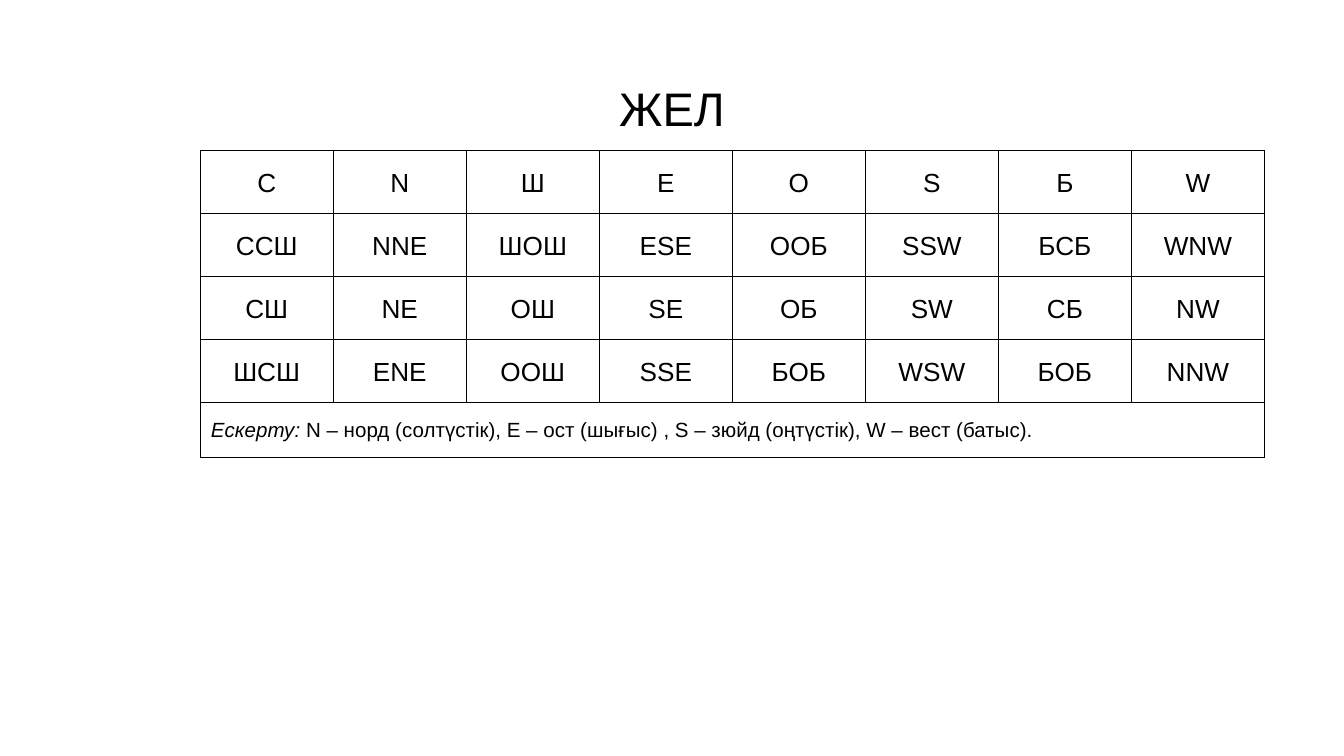
from lxml import etree
from pptx import Presentation
from pptx.dml.color import RGBColor
from pptx.enum.text import MSO_ANCHOR, PP_ALIGN
from pptx.oxml.ns import qn
from pptx.util import Inches, Pt

CENTER, JUSTIFY = PP_ALIGN.CENTER, PP_ALIGN.JUSTIFY
MIDDLE, TOP = MSO_ANCHOR.MIDDLE, MSO_ANCHOR.TOP
COLORS = {"page": "FFFFFF", "ink": "000000"}
FONT = "Arial"
SLIDE_WIDTH = Inches(10)
SLIDE_HEIGHT = SLIDE_WIDTH * 9 // 16
COLUMN_WIDTH, ROW_HEIGHT = Inches(0.99), Inches(0.2)
FRAME_SIDE = Inches(3.28)
CELL_FORMAT = {
    "margin_left": Inches(0.07), "margin_right": Inches(0.07),
    "margin_top": Inches(0.1), "margin_bottom": Inches(0.1),
    "vertical_anchor": TOP,
}
TITLE_FORMAT = {
    "margin_left": Inches(0.1), "margin_right": Inches(0.1),
    "margin_top": Inches(0.1), "margin_bottom": Inches(0.1),
    "vertical_anchor": MIDDLE, "word_wrap": True,
}
CELL_PARA_FORMAT = {"line_spacing": 1.15, "space_after": Pt(12)}

WINDS = [
    ["С", "N", "Ш", "E", "О", "S", "Б", "W"],
    ["ССШ", "NNE", "ШОШ", "ESE", "ООБ", "SSW", "БСБ", "WNW"],
    ["СШ", "NE", "ОШ", "SE", "ОБ", "SW", "СБ", "NW"],
    ["ШСШ", "ENE", "ООШ", "SSE", "БОБ", "WSW", "БОБ", "NNW"],
]
NOTE = [
    ("Ескерту:", True),
    (" N – норд (солтүстік), E – ост (шығыс) , S – зюйд (оңтүстік), W – вест (батыс).", False),
]


def apply_format(target, values):
    for name, value in values.items():
        setattr(target, name, value)


def add_span(para, text, size, italic=False):
    span = para.add_run()
    span.text = text
    apply_format(span.font, {"name": FONT, "size": Pt(size), "italic": italic})
    span.font.color.rgb = RGBColor.from_string(COLORS["ink"])


def add_title(page, text):
    box = page.shapes.add_textbox(
        int(SLIDE_WIDTH * 0.034), Inches(0.49), int(SLIDE_WIDTH * 0.932), Inches(0.63))
    apply_format(box.text_frame, TITLE_FORMAT)
    para = box.text_frame.paragraphs[0]
    para.alignment = CENTER
    add_span(para, text, 25.2)


def set_borders(cell):
    properties = cell._tc.get_or_add_tcPr()
    for position, side in enumerate(("lnL", "lnR", "lnT", "lnB")):
        line = etree.Element(qn(f"a:{side}"), w=str(Pt(0.6)))
        fill = etree.SubElement(line, qn("a:solidFill"))
        etree.SubElement(fill, qn("a:srgbClr"), val=COLORS["ink"])
        properties.insert(position, line)


def fill_cell(cell, spans, size, alignment, indent=0):
    """Write (text, italic) spans into a cell, with a first-line indent."""
    apply_format(cell, CELL_FORMAT)
    para = cell.text_frame.paragraphs[0]
    para._p.get_or_add_pPr().set("indent", str(indent))
    apply_format(para, CELL_PARA_FORMAT)
    para.alignment = alignment
    for text, italic in spans:
        add_span(para, text, size, italic)


def add_wind_table(page):
    """Add the table; its rows grow from the minimum height to fit the text."""
    rows, columns = len(WINDS) + 1, len(WINDS[0])
    frame = page.shapes.add_table(
        rows, columns, Inches(1.49), Inches(1.12), FRAME_SIDE, FRAME_SIDE)
    table = frame.table
    apply_format(table, {"first_row": False, "horz_banding": False})
    for column in table.columns:
        column.width = COLUMN_WIDTH
    for row in table.rows:
        row.height = ROW_HEIGHT
    apply_format(frame, {"width": FRAME_SIDE, "height": FRAME_SIDE})

    for cell in table.iter_cells():
        cell.fill.background()
        set_borders(cell)
    for row, names in enumerate(WINDS):
        for column, name in enumerate(names):
            fill_cell(table.cell(row, column), [(name, False)], 14, CENTER)
    for column in range(columns):
        apply_format(table.cell(rows - 1, column), CELL_FORMAT)
    note_cell = table.cell(rows - 1, 0)
    note_cell.merge(table.cell(rows - 1, columns - 1))
    fill_cell(note_cell, NOTE, 11, JUSTIFY, Inches(0.01))


def main():
    deck = Presentation()
    apply_format(deck, {"slide_width": SLIDE_WIDTH, "slide_height": SLIDE_HEIGHT})
    page = deck.slides.add_slide(deck.slide_layouts[6])
    page.background.fill.solid()
    page.background.fill.fore_color.rgb = RGBColor.from_string(COLORS["page"])
    add_title(page, "ЖЕЛ")
    add_wind_table(page)
    deck.save("out.pptx")


if __name__ == "__main__":
    main()
